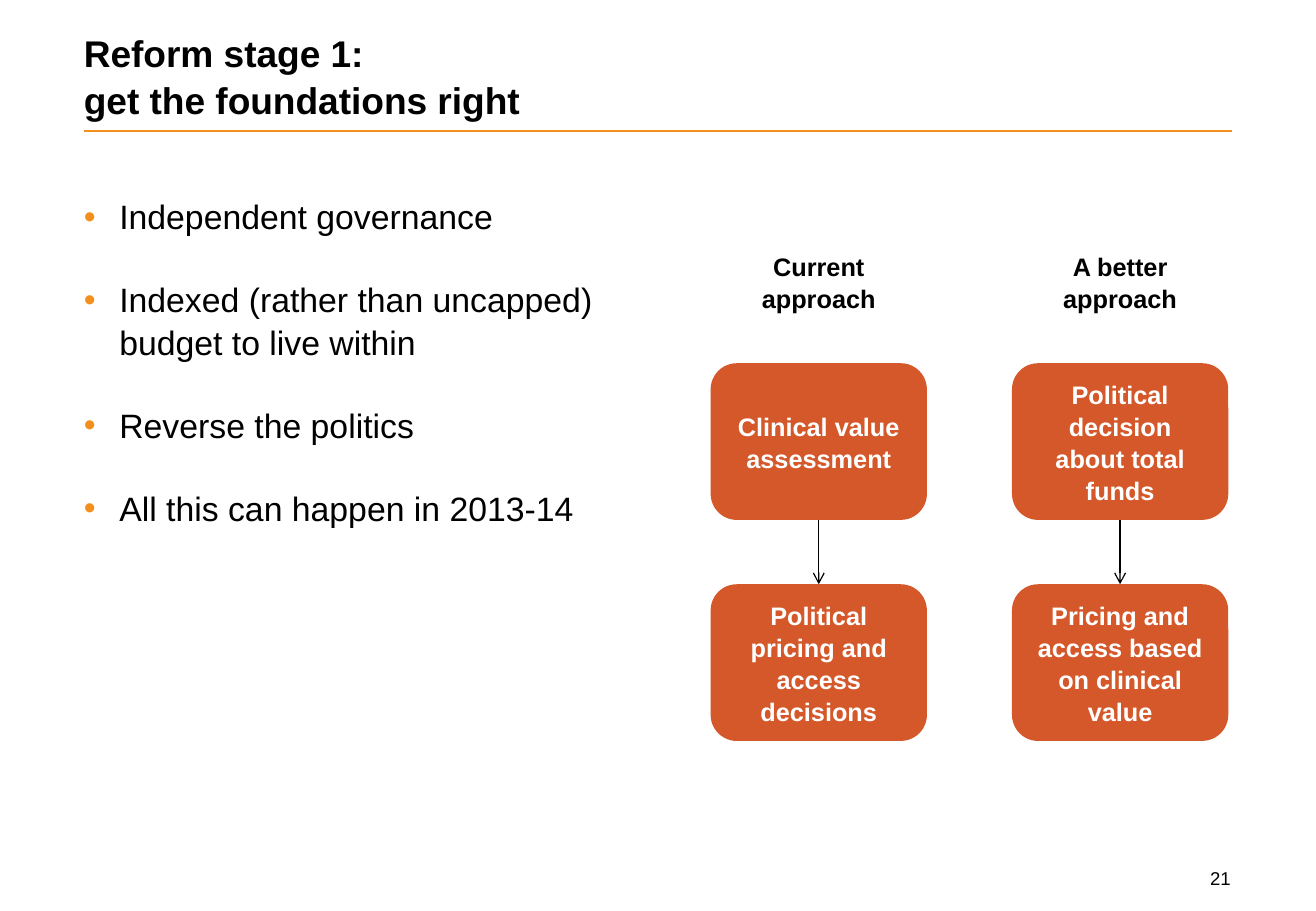
from lxml import etree
from pptx import Presentation
from pptx.dml.color import RGBColor
from pptx.enum.shapes import MSO_CONNECTOR, MSO_SHAPE
from pptx.enum.text import MSO_ANCHOR, MSO_AUTO_SIZE, PP_ALIGN
from pptx.oxml.ns import qn
from pptx.util import Pt

BLACK = RGBColor(0x00, 0x00, 0x00)
WHITE = RGBColor(0xFF, 0xFF, 0xFF)
ORANGE = RGBColor(0xF3, 0x90, 0x1D)
RUST = RGBColor(0xD4, 0x58, 0x2A)

LEFT, CENTER, RIGHT = PP_ALIGN.LEFT, PP_ALIGN.CENTER, PP_ALIGN.RIGHT
TOP, MIDDLE, BOTTOM = MSO_ANCHOR.TOP, MSO_ANCHOR.MIDDLE, MSO_ANCHOR.BOTTOM
ROUND = MSO_SHAPE.ROUNDED_RECTANGLE
STRAIGHT = MSO_CONNECTOR.STRAIGHT
NO_FIT = MSO_AUTO_SIZE.NONE

FONT = "Arial"
MARGIN = 49.7
BOX_W, BOX_H, HEAD_H = 128.2, 92.9, 61.9
COL_X, COL_STEP = 421.2, 178.6
HEAD_Y, FIRST_Y, NEXT_Y = 141.8, 215.3, 346.3

POINTS = [
    "Independent governance",
    "Indexed (rather than uncapped) budget to live within",
    "Reverse the politics",
    "All this can happen in 2013-14",
]
FLOWS = [
    ("Current approach", "Clinical value assessment",
     "Political pricing and access decisions"),
    ("A better approach", "Political decision about total funds",
     "Pricing and access based on clinical value"),
]


def style(frame, size, color=BLACK, bold=False, align=LEFT, anchor=TOP):
    frame.word_wrap = True
    frame.auto_size = NO_FIT
    frame.vertical_anchor = anchor
    for para in frame.paragraphs:
        para.alignment = align
        para.line_spacing = 1.05
        for run in para.runs:
            font = run.font
            font.name, font.size, font.bold = FONT, Pt(size), bold
            font.color.rgb = color


def inset(frame, left, top, right, bottom):
    frame.margin_left, frame.margin_top = Pt(left), Pt(top)
    frame.margin_right, frame.margin_bottom = Pt(right), Pt(bottom)


def add_title(slide, text):
    title = slide.shapes.title
    title.left, title.top = Pt(MARGIN), Pt(18.7)
    title.width, title.height = Pt(544.3), Pt(53.3)
    frame = title.text_frame
    frame.text = text
    inset(frame, 0, 0, 0, 0)
    style(frame, 22, bold=True, anchor=BOTTOM)


def add_text(slide, text, x, y, w, h):
    frame = slide.shapes.add_textbox(Pt(x), Pt(y), Pt(w), Pt(h)).text_frame
    frame.text = text
    return frame


def add_bullet(para):
    props = para._p.get_or_add_pPr()
    props.set("marL", str(Pt(21)))
    props.set("indent", str(Pt(-21)))
    tint = etree.SubElement(props, qn("a:buClr"))
    etree.SubElement(tint, qn("a:srgbClr"), val=str(ORANGE))
    etree.SubElement(props, qn("a:buFont"), typeface=FONT)
    etree.SubElement(props, qn("a:buChar"), char="•")


def add_list(slide, points):
    frame = add_text(slide, "\n".join(points), MARGIN, 111.6, 339.8, 153.4)
    inset(frame, 0, 3.6, 7.2, 3.6)
    for i, para in enumerate(frame.paragraphs):
        add_bullet(para)
        if i:
            para.space_before = Pt(24)
    style(frame, 20)


def add_box(slide, text, x, y, h, fill=None, color=BLACK, anchor=TOP):
    box = slide.shapes.add_shape(ROUND, Pt(x), Pt(y), Pt(BOX_W), Pt(h))
    box.shadow.inherit = False
    box.line.fill.background()
    if fill is None:
        box.fill.background()
    else:
        box.fill.solid()
        box.fill.fore_color.rgb = fill
    box.text_frame.text = text
    style(box.text_frame, 15, color, True, CENTER, anchor)
    return box


def add_line(slide, x1, y1, x2, y2, color, width):
    line = slide.shapes.add_connector(STRAIGHT, Pt(x1), Pt(y1), Pt(x2), Pt(y2))
    line.line.color.rgb = color
    line.line.width = Pt(width)
    etree.SubElement(line._element.spPr, qn("a:effectLst"))
    return line


def add_arrow(slide, start, end):
    line = add_line(slide, 0, 0, 0, 0, BLACK, 0.75)
    line.begin_connect(start, 2)
    line.end_connect(end, 0)
    etree.SubElement(line.line._get_or_add_ln(), qn("a:tailEnd"), type="arrow")


def add_flow(slide, x, head, first, then):
    add_box(slide, head, x, HEAD_Y, HEAD_H)
    start = add_box(slide, first, x, FIRST_Y, BOX_H, RUST, WHITE, MIDDLE)
    end = add_box(slide, then, x, NEXT_Y, BOX_H, RUST, WHITE, MIDDLE)
    add_arrow(slide, start, end)


def main():
    deck = Presentation()
    deck.slide_width, deck.slide_height = Pt(780), Pt(540)
    slide = deck.slides.add_slide(deck.slide_layouts[5])

    # Heading and rule
    add_title(slide, "Reform stage 1:\vget the foundations right")
    add_line(slide, MARGIN, 77.8, 730.1, 77.8, ORANGE, 1.5)

    # Key points
    add_list(slide, POINTS)

    # Two approaches, side by side
    for i, flow in enumerate(FLOWS):
        add_flow(slide, COL_X + i * COL_STEP, *flow)

    # Page number
    page = add_text(slide, "21", 668.2, 509.8, 68.4, 20.9)
    style(page, 11, align=RIGHT)

    deck.save("out.pptx")


if __name__ == "__main__":
    main()
